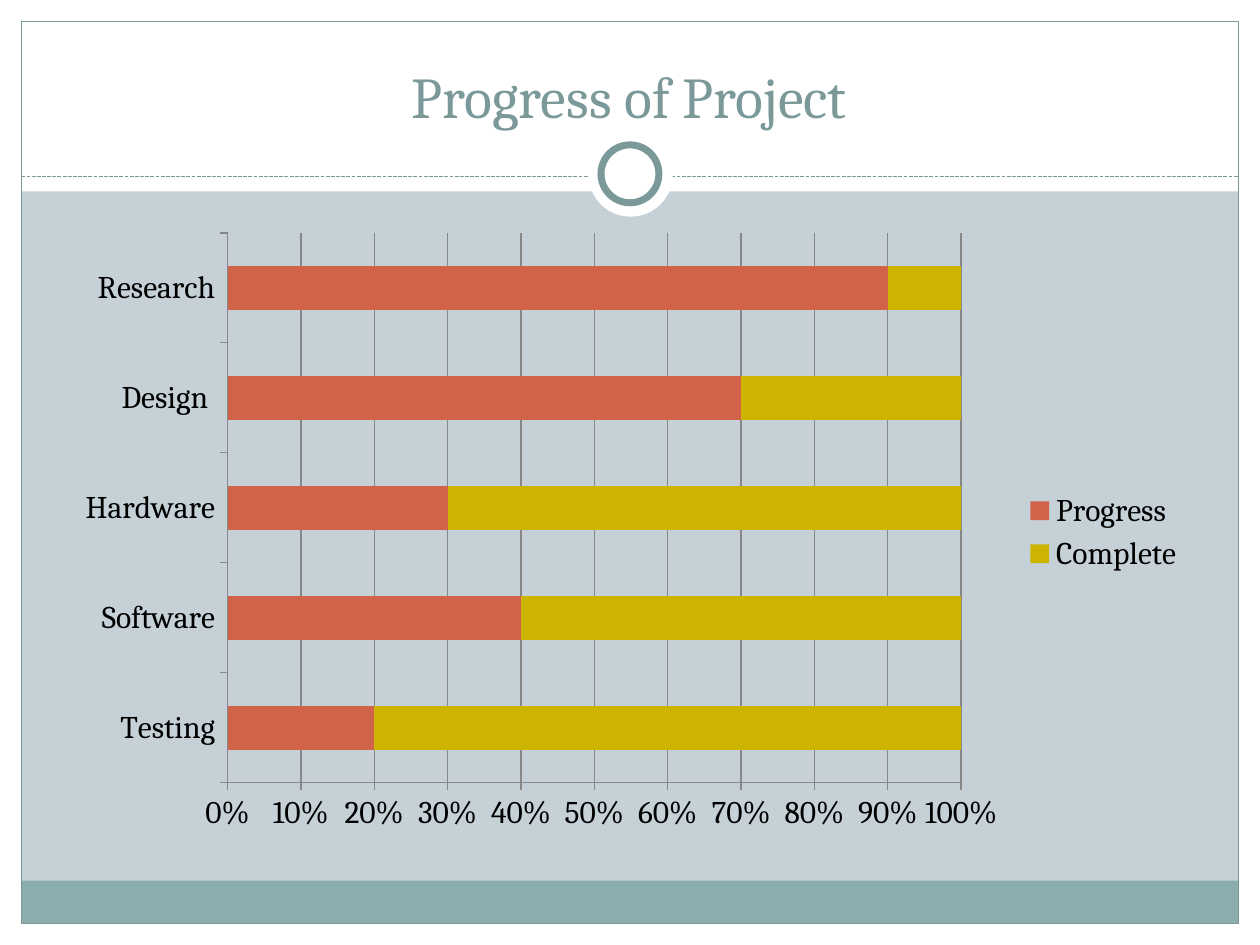
import pptx
import pptx.chart.data
import pptx.dml.color
import pptx.enum.chart
import pptx.enum.dml
import pptx.enum.shapes
import pptx.enum.text
import pptx.oxml
import pptx.oxml.ns
import pptx.util
from pptx.util import Inches, Pt

TITLE = "Progress of Project"
STAGES = ["Testing", "Software", "Hardware", "Design ", "Research"]
SERIES = [
    ("Progress", [20, 40, 30, 70, 90], "D16349"),
    ("Complete", [80, 60, 70, 30, 10], "CCB400"),
]

FONT = "Cambria"
WHITE, TEAL, PALE_TEAL, GRID = "FFFFFF", "7C999A", "8CADAE", "878787"
WIDTH, HEIGHT, MARGIN = 10, 7.5, 0.17
RECT = pptx.enum.shapes.MSO_SHAPE.RECTANGLE
OVAL = pptx.enum.shapes.MSO_SHAPE.OVAL

# preset, (left, top, width, height), fill, line width in points
FRAME = [
    (RECT, (0, HEIGHT - MARGIN, WIDTH, MARGIN), WHITE, None),
    (RECT, (0, 0, WIDTH, 1.52), WHITE, None),
    (RECT, (0, 0, MARGIN, HEIGHT), WHITE, None),
    (RECT, (WIDTH - MARGIN, 0, MARGIN, HEIGHT), WHITE, None),
    (RECT, (MARGIN, 6.99, WIDTH - 2 * MARGIN, 0.34), PALE_TEAL, None),
    (RECT, (MARGIN, MARGIN, WIDTH - 2 * MARGIN, HEIGHT - 2 * MARGIN), None, 0.75),
]
RING = [
    (OVAL, (4.67, 1.05, 0.67, 0.67), WHITE, None),
    (OVAL, (4.77, 1.15, 0.46, 0.46), WHITE, 4),
]


def paint(color_format, hex_color):
    color_format.rgb = pptx.dml.color.RGBColor.from_string(hex_color)


def fill_solid(fill, hex_color):
    fill.solid()
    paint(fill.fore_color, hex_color)


def draw_shapes(slide, parts):
    for preset, box, fill, line_width in parts:
        shape = slide.shapes.add_shape(preset, *map(Inches, box))
        shape.shadow.inherit = False
        if fill:
            fill_solid(shape.fill, fill)
        else:
            shape.fill.background()
        if line_width:
            paint(shape.line.color, TEAL)
            shape.line.width = Pt(line_width)
        else:
            shape.line.fill.background()


def draw_divider(slide):
    divider = slide.shapes.add_connector(
        pptx.enum.shapes.MSO_CONNECTOR.STRAIGHT,
        Inches(MARGIN), Inches(1.4), Inches(WIDTH - MARGIN), Inches(1.4))
    paint(divider.line.color, TEAL)
    divider.line.width = Pt(0.75)
    divider.line.dash_style = pptx.enum.dml.MSO_LINE.SQUARE_DOT
    properties = divider.element.find(pptx.oxml.ns.qn("p:spPr"))
    properties.append(pptx.oxml.parse_xml(
        f"<a:effectLst {pptx.oxml.ns.nsdecls('a')}/>"))


def write_title(slide):
    title = slide.shapes.title
    title.left, title.top = Inches(0.33), Inches(0.25)
    title.width, title.height = Inches(9.33), Inches(0.83)
    frame = title.text_frame
    frame.word_wrap = True
    frame.vertical_anchor = pptx.enum.text.MSO_ANCHOR.BOTTOM
    paragraph = frame.paragraphs[0]
    paragraph.alignment = pptx.enum.text.PP_ALIGN.CENTER
    run = paragraph.add_run()
    run.text = TITLE
    run.font.size = Pt(33)
    run.font.name = FONT
    paint(run.font.color, TEAL)
    # The title sits in front of the white header band.
    title.element.getparent().append(title.element)


def draw_chart(slide):
    data = pptx.chart.data.CategoryChartData()
    data.categories = STAGES
    for name, values, _ in SERIES:
        data.add_series(name, values)
    chart = slide.shapes.add_chart(
        pptx.enum.chart.XL_CHART_TYPE.BAR_STACKED_100,
        Inches(0.5), Inches(1.75), Inches(9), Inches(4.95), data).chart
    chart.has_title = False
    chart.font.size = Pt(18)
    chart.font.name = FONT
    paint(chart.font.color, "000000")

    plot = chart.plots[0]
    plot.vary_by_categories = False
    plot.gap_width = 150
    plot.overlap = 100
    for series, (_, _, color) in zip(plot.series, SERIES):
        fill_solid(series.format.fill, color)

    chart.has_legend = True
    chart.legend.position = pptx.enum.chart.XL_LEGEND_POSITION.RIGHT
    chart.legend.include_in_layout = False

    percent_axis = chart.value_axis
    percent_axis.has_major_gridlines = True
    percent_axis.major_unit = 0.1
    percent_axis.tick_labels.number_format = "0%"
    percent_axis.tick_labels.number_format_is_linked = False
    for axis in (chart.category_axis, percent_axis):
        axis.major_tick_mark = pptx.enum.chart.XL_TICK_MARK.OUTSIDE
    for part in (chart.category_axis, percent_axis, percent_axis.major_gridlines):
        paint(part.format.line.color, GRID)
        part.format.line.width = Pt(0.75)


def main():
    deck = pptx.Presentation()
    deck.slide_width, deck.slide_height = Inches(WIDTH), Inches(HEIGHT)
    slide = deck.slides.add_slide(deck.slide_layouts.get_by_name("Title Only"))
    fill_solid(slide.background.fill, "C5D1D7")
    draw_shapes(slide, FRAME)
    draw_divider(slide)
    draw_shapes(slide, RING)
    write_title(slide)
    draw_chart(slide)
    deck.save("out.pptx")


if __name__ == "__main__":
    main()
